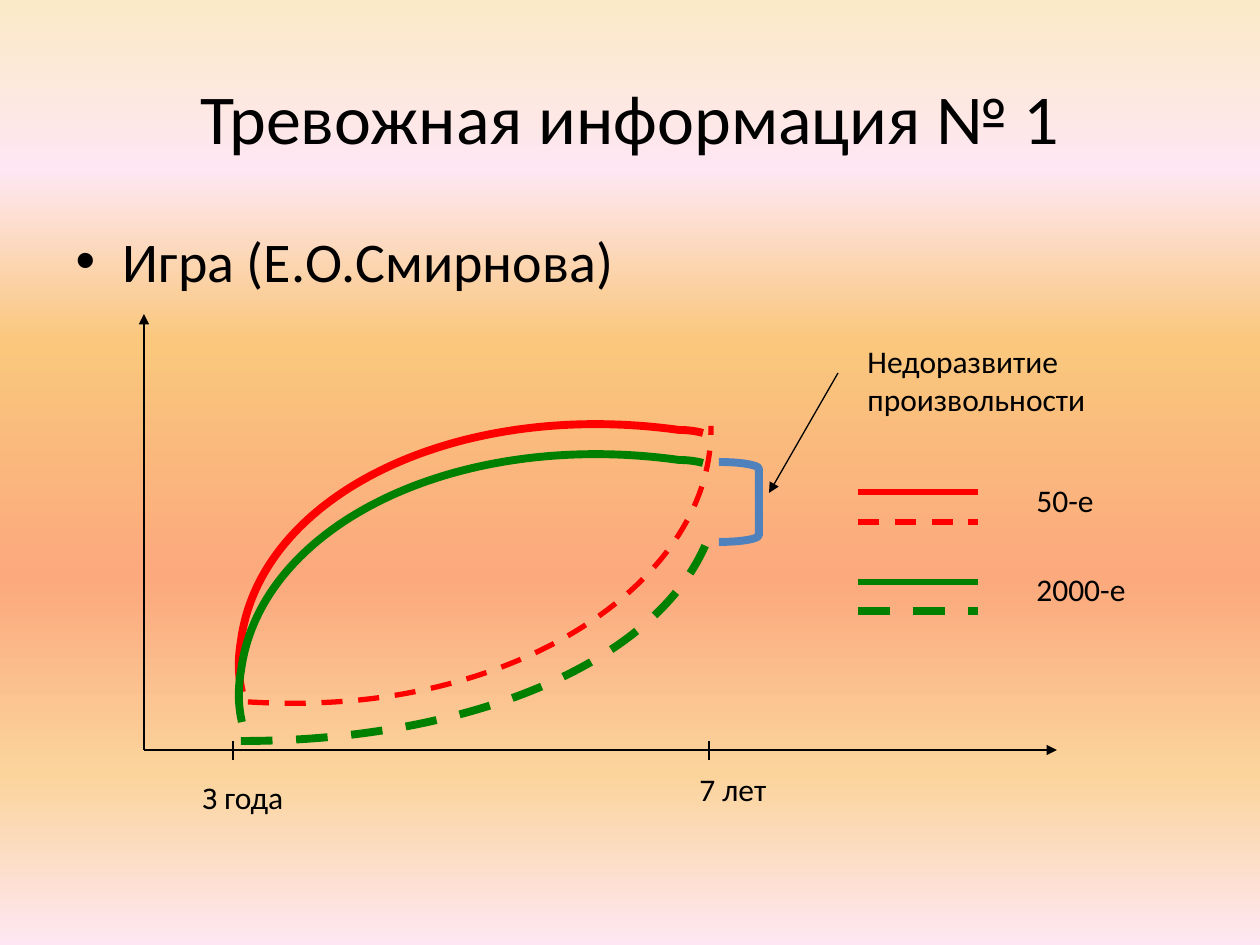
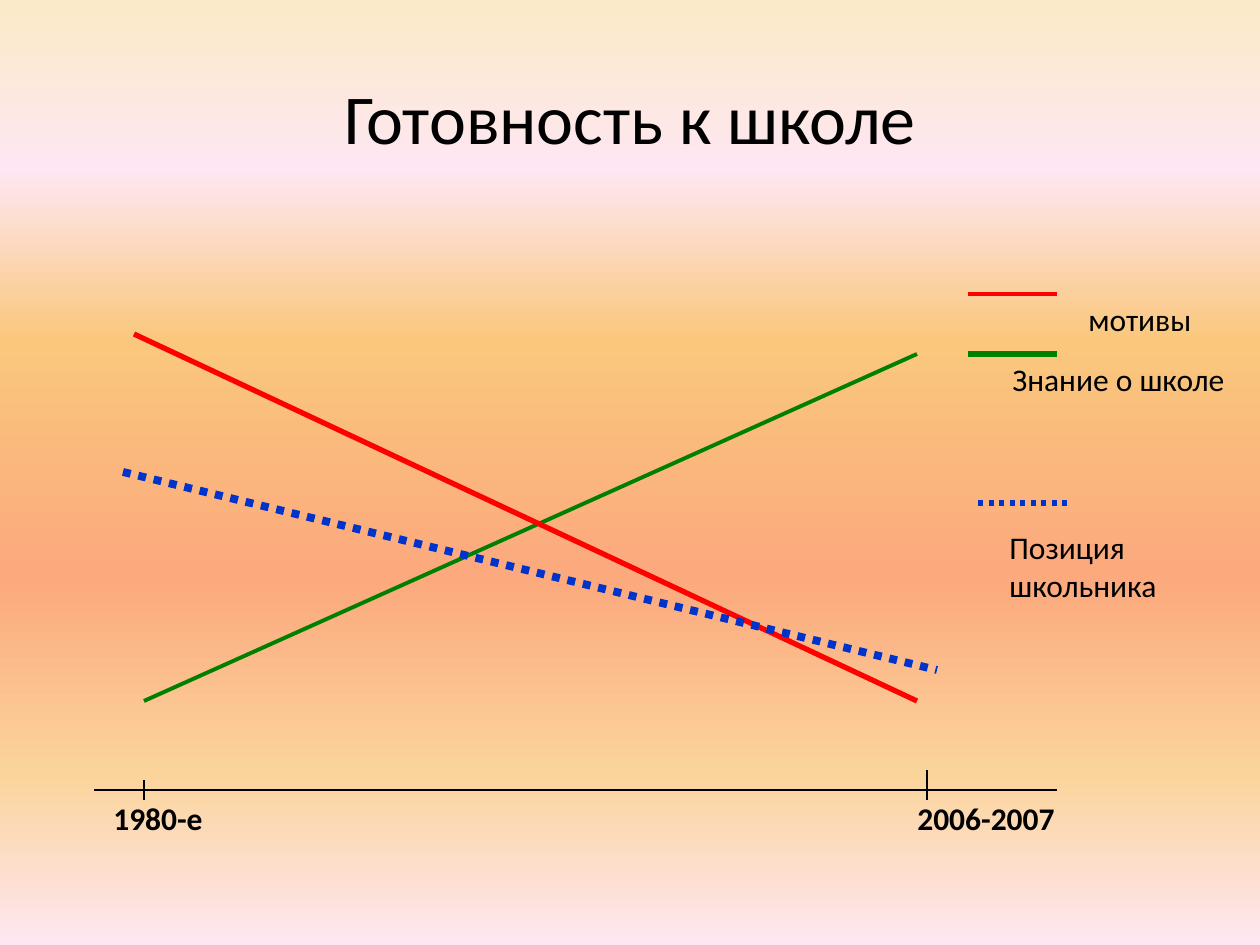
from pptx import Presentation
from pptx.dml.color import RGBColor
from pptx.enum.dml import MSO_LINE
from pptx.enum.shapes import MSO_CONNECTOR, MSO_SHAPE
from pptx.enum.text import MSO_ANCHOR, MSO_AUTO_SIZE, PP_ALIGN
from pptx.oxml.ns import qn
from pptx.util import Emu, Pt
from lxml import etree

STRAIGHT = MSO_CONNECTOR.STRAIGHT
BRACKET = MSO_SHAPE.RIGHT_BRACKET
DASH, DOT = MSO_LINE.DASH, MSO_LINE.ROUND_DOT
MIDDLE, CENTER = MSO_ANCHOR.MIDDLE, PP_ALIGN.CENTER
FIT_SHAPE = MSO_AUTO_SIZE.SHAPE_TO_FIT_TEXT

# Shared look: 126 px to the inch
EMU_PER_PX = 914400 / 126
FONT = "Calibri"
COLORS = {"black": "000000", "red": "FF0000", "green": "008000",
          "blue": "0033CC", "bracket": "4F81BD"}
BACKGROUND = [(0, "FBEAC7"), (18, "FEE7F2"), (36, "FAC77D"),
              (61, "FBA97D"), (82, "FBD49C"), (100, "FEE7F2")]
TITLE_BOX = (63, 38, 1134, 157)
BODY_BOX = (63, 220, 1134, 624)
TITLE_ONLY, TITLE_AND_BODY = 5, 1
HAIRLINE = 0.75
LABEL_HEIGHT, LABEL_LINE = 50, 38

# Slide 1: play at 3 and 7 years
PLAY_TITLE = "Тревожная информация № 1"
PLAY_BULLET = "Игра (Е.О.Смирнова)"
ORIGIN, X_END, Y_END = (144, 750), (1057, 750), (144, 314)
AGE_TICKS = [233, 709]
ARCH = [(703, 433), (696, 431), (687, 430), (679, 430), (456, 399),
        (260, 495), (241, 641), (238, 658), (238, 675), (242, 692)]
ARCH_DROP = 30
# Bezier points, color, width, dash
PLAY_CURVES = [
    (ARCH, "red", 4.5, None),
    ([(248, 702), (268, 703), (290, 704), (311, 703),
      (536, 698), (714, 573), (711, 426)], "red", 3, DASH),
    ([(241, 741), (242, 741), (242, 741), (243, 741),
      (465, 741), (658, 665), (708, 539)], "green", 4.5, DASH),
    ([(x, y + ARCH_DROP) for x, y in ARCH], "green", 4.5, None),
]
BRACKET_BOX = (719, 462, 40, 80)
POINTER = ((838, 373), (769, 493))
PLAY_LEGEND_X = (858, 978)
# y, color, width, dash
PLAY_LEGEND = [(492, "red", 3, None), (522, "red", 3, DASH),
               (582, "green", 3, None), (611, "green", 4.5, DASH)]
# left, top, width, lines of text
PLAY_LABELS = [
    (855, 336, 261, ["Недоразвитие", "произвольности"]),
    (190, 772, 118, ["З года"]),
    (687, 764, 102, ["7 лет"]),
    (1024, 475, 88, ["50-е"]),
    (1024, 564, 123, ["2000-е"]),
]

# Slide 2: readiness for school over the years
SCHOOL_TITLE = "Готовность к школе"
# start, end, color, width, dash
SCHOOL_LINES = [
    ((94, 790), (1057, 790), "black", HAIRLINE, None),
    ((144, 701), (917, 354), "green", 2.25, None),
    ((134, 334), (917, 701), "red", 3, None),
    ((123, 472), (937, 670), "blue", 4.5, DOT),
    ((144, 780), (144, 800), "black", HAIRLINE, None),
    ((927, 770), (927, 800), "black", HAIRLINE, None),
]
SCHOOL_LEGEND_WIDTH = 89
# left, y, color, width, dash
SCHOOL_LEGEND = [(968, 294, "red", 2.25, None), (968, 354, "green", 3, None),
                 (978, 503, "blue", 3, DOT)]
SCHOOL_YEARS = [(101, 793, 123, ["1980-е"]), (905, 793, 176, ["2006-2007"])]
SCHOOL_LABELS = [
    (1076, 294, 136, ["мотивы"]),
    (1000, 354, 260, ["Знание о школе"]),
    (997, 522, 183, ["Позиция", "школьника"]),
]


def px(*lengths):
    return [Emu(round(length * EMU_PER_PX)) for length in lengths]


def set_font(para, size, bold=False):
    para.font.name, para.font.size, para.font.bold = FONT, Pt(size), bold
    para.font.color.rgb = RGBColor.from_string(COLORS["black"])


def set_line(shape, color, width, dash=None):
    shape.line.color.rgb = RGBColor.from_string(COLORS[color])
    shape.line.width = Pt(width)
    if dash:
        shape.line.dash_style = dash


def paint_background(master):
    fill = master.background.fill
    fill.gradient()
    fill.gradient_angle = 270
    stops = next(master.element.iter(qn("a:gsLst")))
    for stop in list(stops):
        stops.remove(stop)
    for percent, color in BACKGROUND:
        stop = etree.SubElement(stops, qn("a:gs"), pos=str(percent * 1000))
        etree.SubElement(stop, qn("a:srgbClr"), val=color)


def fill_placeholder(holder, box, text, size):
    holder.left, holder.top, holder.width, holder.height = px(*box)
    holder.text_frame.text = text
    para = holder.text_frame.paragraphs[0]
    set_font(para, size)
    return para


def add_page(deck, layout, title):
    page = deck.slides.add_slide(deck.slide_layouts[layout])
    para = fill_placeholder(page.shapes.title, TITLE_BOX, title, 40)
    para.alignment = CENTER
    page.shapes.title.text_frame.vertical_anchor = MIDDLE
    return page


def add_line(page, start, end, color="black", width=HAIRLINE, dash=None, arrow=False):
    line = page.shapes.add_connector(STRAIGHT, *px(*start, *end))
    set_line(line, color, width, dash)
    if arrow:
        etree.SubElement(line.get_or_add_ln(), qn("a:tailEnd"), type="triangle")
    etree.SubElement(line.element.spPr, qn("a:effectLst"))


def add_curve(page, points, color, width, dash):
    builder = page.shapes.build_freeform(*points[0], scale=EMU_PER_PX)
    builder.add_line_segments(points[1:], close=False)
    curve = builder.convert_to_shape()
    # Every three segments become one cubic curve
    outline = next(curve.element.iter(qn("a:path")))
    segments = outline.findall(qn("a:lnTo"))
    for first in range(0, len(segments), 3):
        cubic = etree.SubElement(outline, qn("a:cubicBezTo"))
        for segment in segments[first:first + 3]:
            cubic.append(segment[0])
            outline.remove(segment)
    curve.fill.background()
    curve.shadow.inherit = False
    set_line(curve, color, width, dash)


def add_label(page, left, top, width, lines, bold=False):
    height = LABEL_HEIGHT + LABEL_LINE * (len(lines) - 1)
    frame = page.shapes.add_textbox(*px(left, top, width, height)).text_frame
    frame.word_wrap = False
    frame.auto_size = FIT_SHAPE
    frame.text = "\n".join(lines)
    for para in frame.paragraphs:
        set_font(para, 18, bold)


def build_play_page(deck):
    page = add_page(deck, TITLE_AND_BODY, PLAY_TITLE)
    fill_placeholder(page.placeholders[1], BODY_BOX, PLAY_BULLET, 32)
    # Axes and curves
    for end in (X_END, Y_END):
        add_line(page, ORIGIN, end, arrow=True)
    for curve in PLAY_CURVES:
        add_curve(page, *curve)
    # Gap bracket and its pointer
    bracket = page.shapes.add_shape(BRACKET, *px(*BRACKET_BOX))
    bracket.adjustments[0] = 0.17
    bracket.fill.background()
    bracket.shadow.inherit = False
    set_line(bracket, "bracket", 4.5)
    add_line(page, *POINTER, arrow=True)
    # Ticks, legend and labels
    for x in AGE_TICKS:
        add_line(page, (x, 741), (x, 760))
    left, right = PLAY_LEGEND_X
    for y, *style in PLAY_LEGEND:
        add_line(page, (left, y), (right, y), *style)
    for label in PLAY_LABELS:
        add_label(page, *label)


def build_school_page(deck):
    page = add_page(deck, TITLE_ONLY, SCHOOL_TITLE)
    for line in SCHOOL_LINES:
        add_line(page, *line)
    for year in SCHOOL_YEARS:
        add_label(page, *year, bold=True)
    # Legend
    for left, y, *style in SCHOOL_LEGEND:
        add_line(page, (left, y), (left + SCHOOL_LEGEND_WIDTH, y), *style)
    for label in SCHOOL_LABELS:
        add_label(page, *label)


def main():
    deck = Presentation()
    deck.slide_width, deck.slide_height = px(1260, 945)
    paint_background(deck.slide_master)
    build_play_page(deck)
    build_school_page(deck)
    deck.save("out.pptx")


if __name__ == "__main__":
    main()
